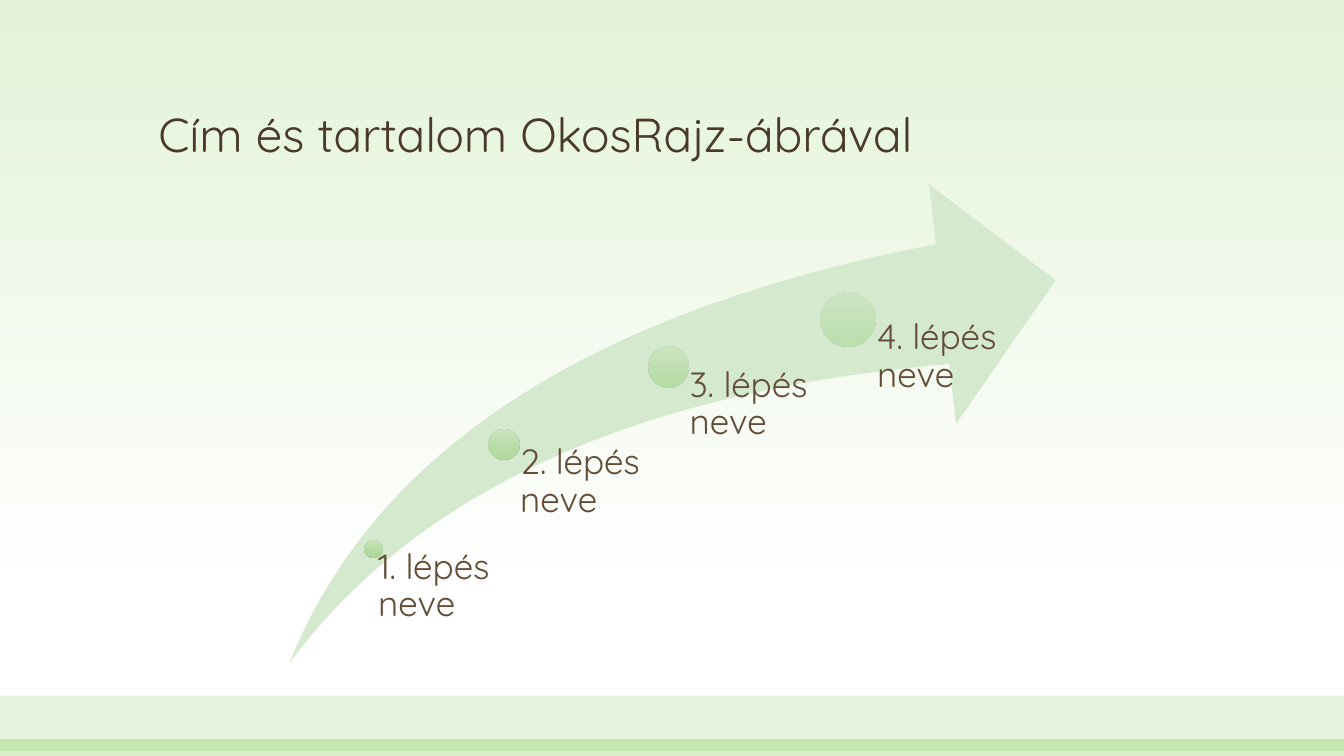
from lxml import etree
from pptx import Presentation
from pptx.dml import color
from pptx.enum import shapes, text
from pptx.oxml import ns
from pptx.util import Inches, Pt

COLORS = {
    "sky": "E3F3D8", "ground": "FFFFFF", "band": "72C23C", "arrow": "D5E9CE",
    "dot_top": "C8E5BC", "dot_middle": "B3DBA2", "dot_bottom": "A4D78D",
    "heading": "4A3A2A", "label": "624D38",
}
FONT = "Quicksand"


def set_gradient(fill, owner, stops, opacity=100):
    fill.gradient()
    fill.gradient_angle = 270
    stop_list = owner.find(".//" + ns.qn("a:gsLst"))
    for old_stop in list(stop_list):
        stop_list.remove(old_stop)
    for position, name in stops:
        stop = etree.SubElement(stop_list, ns.qn("a:gs"), pos=str(position * 1000))
        rgb = etree.SubElement(stop, ns.qn("a:srgbClr"), val=COLORS[name])
        if opacity < 100:
            etree.SubElement(rgb, ns.qn("a:alpha"), val=str(opacity * 1000))


def write_text(frame, words, size, color_name):
    frame.text = words
    paragraph = frame.paragraphs[0]
    paragraph.line_spacing = 0.9
    paragraph.alignment = text.PP_ALIGN.LEFT
    for key, value in {"name": FONT, "size": Pt(size)}.items():
        setattr(paragraph.runs[0].font, key, value)
    paragraph.runs[0].font.color.rgb = color.RGBColor.from_string(COLORS[color_name])


prs = Presentation()
prs.slide_width = Inches(13.33)
prs.slide_height = Inches(7.5)
slide = prs.slides.add_slide(prs.slide_layouts[5])
set_gradient(slide.background.fill, slide.element, [(0, "sky"), (79, "ground")])

for top, height, opacity in [(6.9, 0.55, 17), (7.33, 0.17, 28)]:
    band = slide.shapes.add_shape(
        shapes.MSO_SHAPE.RECTANGLE, 0, Inches(top), prs.slide_width, Inches(height))
    band.shadow.inherit = False
    band.line.fill.background()
    band.fill.solid()
    band.fill.fore_color.rgb = color.RGBColor.from_string(COLORS["band"])
    rgb = band.element.spPr.find(".//" + ns.qn("a:srgbClr"))
    etree.SubElement(rgb, ns.qn("a:alpha"), val=str(opacity * 1000))

heading = slide.shapes.title
for key, value in {"left": 1.47, "top": 0.48, "width": 10.4, "height": 1.19}.items():
    setattr(heading, key, Inches(value))
write_text(heading.text_frame, "Cím és tartalom OkosRajz-ábrával", 34, "heading")
heading.text_frame.vertical_anchor = text.MSO_ANCHOR.BOTTOM

arrow_top, arrow_height = 1.83, 4.75
arrow = slide.shapes.add_shape(
    shapes.MSO_SHAPE.SWOOSH_ARROW,
    Inches(2.87), Inches(arrow_top), Inches(7.6), Inches(arrow_height))
arrow.adjustments[0] = 0.25
arrow.adjustments[1] = 0.25
arrow.shadow.inherit = False
arrow.line.fill.background()
arrow.fill.solid()
arrow.fill.fore_color.rgb = color.RGBColor.from_string(COLORS["arrow"])

steps = [
    (3.62, 5.36, 0.17, 90, 3.66, 1.38, 0.09),
    (4.85, 4.26, 0.3, 77, 5, 1.6, 0.16),
    (6.43, 3.44, 0.4, 63, 6.63, 1.6, 0.21),
    (8.14, 2.9, 0.54, 50, 8.41, 1.6, 0.29),
]
dot_stops = [(0, "dot_top"), (50, "dot_middle"), (100, "dot_bottom")]
for number, step in enumerate(steps, 1):
    left, top, diameter, opacity, label_left, label_width, indent = step
    dot = slide.shapes.add_shape(
        shapes.MSO_SHAPE.OVAL,
        Inches(left), Inches(top), Inches(diameter), Inches(diameter))
    dot.shadow.inherit = False
    dot.line.fill.background()
    set_gradient(dot.fill, dot.element.spPr, dot_stops, opacity)

    label_top = top + diameter / 2
    label = slide.shapes.add_textbox(
        Inches(label_left), Inches(label_top),
        Inches(label_width), Inches(arrow_top + arrow_height - label_top))
    label_format = {
        "word_wrap": True, "margin_left": Inches(indent),
        "margin_top": 0, "margin_right": 0, "margin_bottom": 0,
    }
    for key, value in label_format.items():
        setattr(label.text_frame, key, value)
    write_text(label.text_frame, f"{number}. lépés neve", 25, "label")

prs.save("out.pptx")
